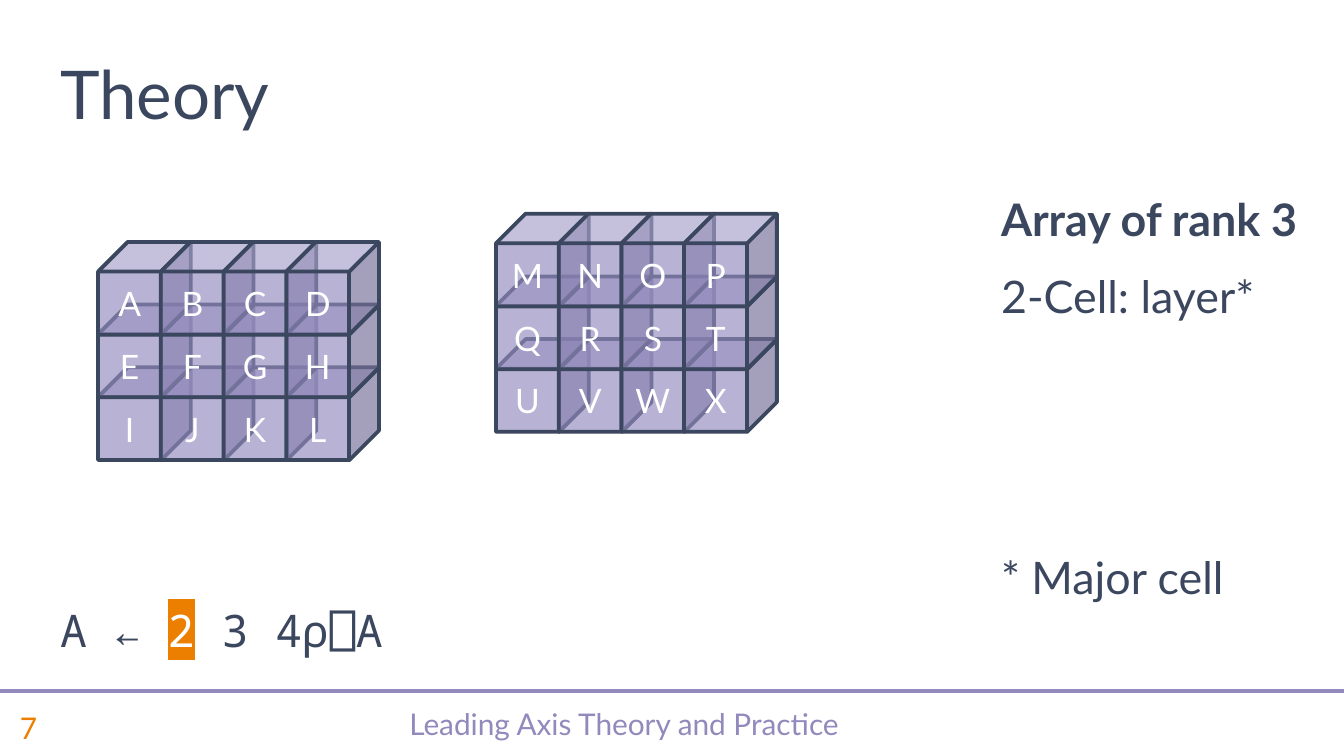
from lxml import etree
from pptx import Presentation
from pptx.dml.color import RGBColor
from pptx.enum.shapes import MSO_CONNECTOR, MSO_SHAPE
from pptx.enum.text import MSO_ANCHOR, PP_ALIGN
from pptx.oxml.ns import qn
from pptx.util import Inches, Pt

DARK, PURPLE, ORANGE, WHITE = "3B475E", "928ABD", "ED7F00", "FFFFFF"
WIDTH = 10
HEIGHT = WIDTH * 9 / 16
TITLE = "Theory"
FOOTER = "Leading Axis Theory and Practice"
PAGE_NUMBER = "7"
NOTES = [("Array of rank 3", True, 0), ("2-Cell: layer*", False, 0), ("* Major cell", False, 110)]
CODE = [("A ← ", DARK, None), ("2", WHITE, ORANGE), (" 3 4⍴⎕A", DARK, None)]
LAYERS = [
    {"left": 3.69, "top": 1.59, "rows": ["MNOP", "QRST", "UVWX"]},
    {"left": 0.73, "top": 1.80, "rows": ["ABCD", "EFGH", "IJKL"]},
]
MARGIN, BODY_TOP, BODY_HEIGHT = 0.35, 1.38, 3.55
FOOTER_TOP, FOOTER_HEIGHT, NUMBER_LEFT, NUMBER_WIDTH = 5.19, 0.44, 0.05, 0.73
RULE_TOP = 5.14
CUBE_SIDE, CUBE_DEPTH = 0.69, 0.32
CUBE_STEP = 1.4 / 3


def color(hex_string):
    return RGBColor.from_string(hex_string)


def style(run, size, hex_string, font="Lato", bold=False):
    run.font.name = font
    run.font.size = Pt(size)
    run.font.bold = bold
    run.font.color.rgb = color(hex_string)


def add_box(left, top, width, height, anchor=MSO_ANCHOR.TOP):
    box = slide.shapes.add_textbox(Inches(left), Inches(top), Inches(width), Inches(height))
    box.text_frame.word_wrap = True
    box.text_frame.vertical_anchor = anchor
    return box.text_frame


def add_label(text, frame, size, hex_string):
    paragraph = frame.paragraphs[0]
    paragraph.text = text
    style(paragraph.runs[0], size, hex_string)
    return paragraph


def highlight(run, hex_string):
    mark = etree.Element(qn("a:highlight"))
    etree.SubElement(mark, qn("a:srgbClr"), val=hex_string)
    run.font._element.find(qn("a:latin")).addprevious(mark)


def add_cube(letter, left, top):
    cube = slide.shapes.add_shape(
        MSO_SHAPE.CUBE, Inches(left), Inches(top), Inches(CUBE_SIDE), Inches(CUBE_SIDE))
    cube.adjustments[0] = CUBE_DEPTH
    cube.shadow.inherit = False
    cube.fill.solid()
    cube.fill.fore_color.rgb = color(PURPLE)
    fill = cube._element.spPr.find(qn("a:solidFill"))
    etree.SubElement(fill[0], qn("a:alpha"), val="65000")
    cube.line.color.rgb = color(DARK)
    cube.line.width = Pt(2)
    frame = cube.text_frame
    frame.margin_left = frame.margin_right = frame.margin_top = frame.margin_bottom = 0
    frame.vertical_anchor = MSO_ANCHOR.MIDDLE
    add_label(letter, frame, 18, WHITE).alignment = PP_ALIGN.CENTER


presentation = Presentation()
presentation.slide_width, presentation.slide_height = Inches(WIDTH), Inches(HEIGHT)
slide = presentation.slides.add_slide(presentation.slide_layouts[6])

footer_frame = add_box(0.78, FOOTER_TOP, 7.73, FOOTER_HEIGHT, MSO_ANCHOR.MIDDLE)
footer = add_label(FOOTER, footer_frame, 16, PURPLE)
footer.alignment = PP_ALIGN.CENTER
footer.line_spacing = 0.8
number_frame = add_box(NUMBER_LEFT, FOOTER_TOP, NUMBER_WIDTH, FOOTER_HEIGHT, MSO_ANCHOR.MIDDLE)
add_label(PAGE_NUMBER, number_frame, 16, ORANGE)

rule = slide.shapes.add_connector(
    MSO_CONNECTOR.STRAIGHT, 0, Inches(RULE_TOP), Inches(WIDTH), Inches(RULE_TOP))
rule.line.color.rgb = color(PURPLE)
rule.line.width = Pt(2.25)
etree.SubElement(rule._element.spPr, qn("a:effectLst"))

notes_frame = add_box(7.35, BODY_TOP, 2.5, BODY_HEIGHT)
for index, (text, bold, space_before) in enumerate(NOTES):
    paragraph = notes_frame.add_paragraph() if index else notes_frame.paragraphs[0]
    paragraph.text = text
    paragraph.space_after = Pt(12)
    if space_before:
        paragraph.space_before = Pt(space_before)
    style(paragraph.runs[0], 24, DARK, bold=bold)

code_frame = add_box(MARGIN, BODY_TOP, 6.66, BODY_HEIGHT, MSO_ANCHOR.BOTTOM)
code_line = code_frame.paragraphs[0]
code_line.space_after = Pt(12)
for text, text_color, mark_color in CODE:
    run = code_line.add_run()
    run.text = text
    style(run, 24, text_color, "Noto Sans Mono")
    if mark_color:
        highlight(run, mark_color)

title_frame = add_box(MARGIN, 0.29, 7.66, 0.75, MSO_ANCHOR.BOTTOM)
add_label(TITLE, title_frame, 36, DARK)

for layer in LAYERS:
    for row, letters in reversed(list(enumerate(layer["rows"]))):
        for column, letter in enumerate(letters):
            add_cube(letter, layer["left"] + column * CUBE_STEP, layer["top"] + row * CUBE_STEP)

presentation.save("out.pptx")
